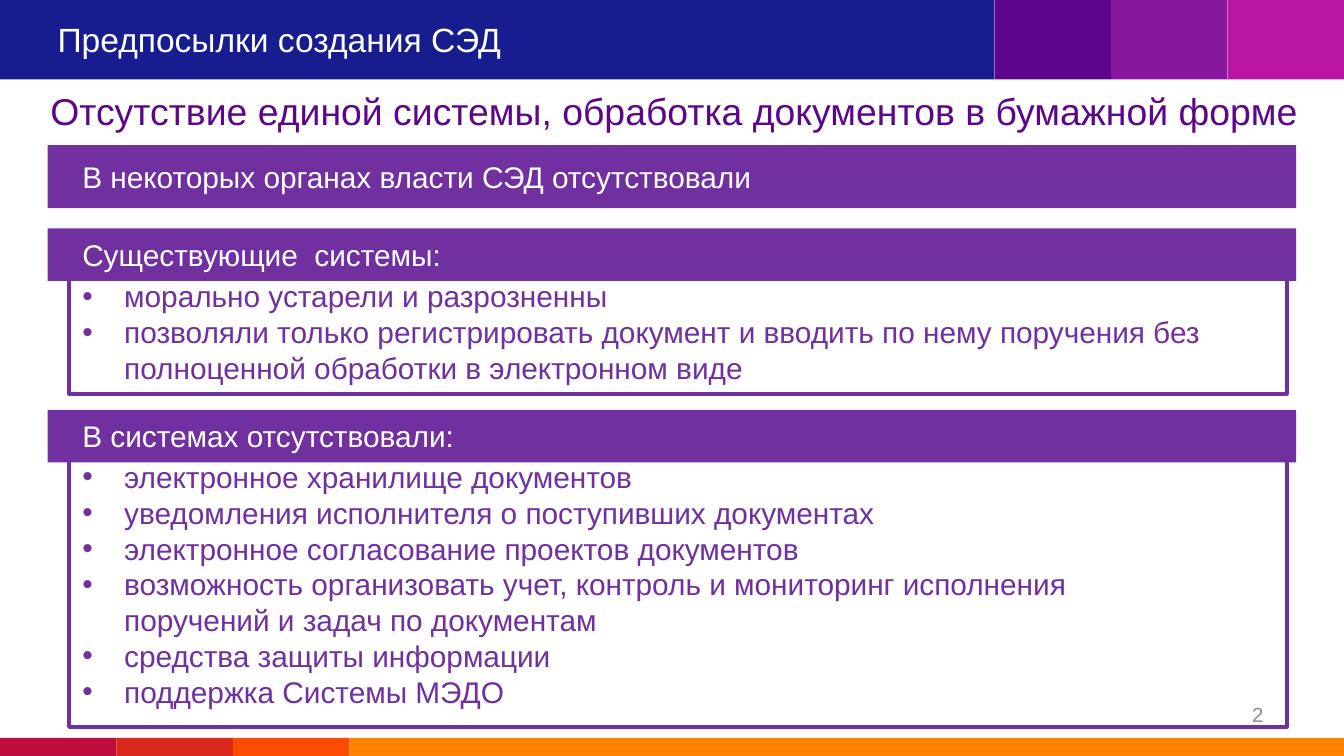
from dataclasses import dataclass
from itertools import accumulate
from typing import NamedTuple

from lxml.etree import SubElement
from pptx import Presentation
from pptx.dml.color import RGBColor
from pptx.enum.shapes import MSO_SHAPE
from pptx.enum.text import MSO_ANCHOR, PP_ALIGN
from pptx.oxml.ns import qn
from pptx.util import Inches, Pt

CELL = 0.1  # inches; the slide is a 16:9 grid, 100 columns wide
COLUMNS = 100
ROWS = COLUMNS * 9 / 16
STRIPE = 26 / 3  # columns in one narrow colour stripe
WIDE = COLUMNS - 3 * STRIPE
FOOTER_HEIGHT = 1.35
BAR_LEFT, BAR_WIDTH = 3.54, 92.9
INNER_LEFT, INNER_WIDTH = 5.14, 90.6


@dataclass(frozen=True)
class Theme:
    font: str = "Arial"
    white: str = "FFFFFF"
    heading: str = "5C068C"
    accent: str = "7030A0"
    muted: str = "8C8C8C"
    header: tuple = ("171C8F", "5C068C", "87189D", "BB16A3")
    footer: tuple = ("BF0D3E", "DA291C", "FC4C02", "FF8200")
    title_size: int = 18
    heading_size: int = 20
    text_size: int = 16
    number_size: int = 11
    frame_width: int = 2
    hanging: float = 3.12


THEME = Theme()


class Area(NamedTuple):
    """Left, top, width and height in grid cells."""
    left: float
    top: float
    width: float
    height: float

    def lengths(self) -> list:
        return [Inches(cells * CELL) for cells in self]


class Section(NamedTuple):
    heading: str
    top: float
    bar_height: float
    text_offset: float
    frame: Area | None = None
    list_top: float = 0
    items: tuple = ()


SECTIONS = (
    Section("В некоторых органах власти СЭД отсутствовали", 10.8, 4.7, 0.5),
    Section("Существующие  системы:", 17, 3.9, 0.1,
            Area(INNER_LEFT, 20.8, INNER_WIDTH, 8.5), 20.2,
            ("морально устарели и разрозненны",
             "позволяли только регистрировать документ и вводить по нему "
             "поручения без полноценной обработки в электронном виде")),
    Section("В системах отсутствовали:", 30.5, 3.9, 0.1,
            Area(INNER_LEFT, 33.6, INNER_WIDTH, 20.5), 33.63,
            ("электронное хранилище документов",
             "уведомления исполнителя о поступивших документах",
             "электронное согласование проектов документов",
             "возможность организовать учет, контроль и мониторинг исполнения \n"
             "поручений и задач по документам",
             "средства защиты информации",
             "поддержка Системы МЭДО")),
)


def add_block(slide, area: Area, fill: str, line: str | None = None) -> None:
    block = slide.shapes.add_shape(MSO_SHAPE.RECTANGLE, *area.lengths())
    block.shadow.inherit = False
    block.fill.solid()
    block.fill.fore_color.rgb = RGBColor.from_string(fill)
    if line:
        block.line.color.rgb = RGBColor.from_string(line)
        block.line.width = Pt(THEME.frame_width)
    else:
        block.line.fill.background()


def add_bullet(para) -> None:
    properties = para._p.get_or_add_pPr()
    hanging = Inches(THEME.hanging * CELL)
    properties.set("marL", str(hanging))
    properties.set("indent", str(-hanging))
    SubElement(properties, qn("a:buFont"), typeface=THEME.font)
    SubElement(properties, qn("a:buChar"), char="•")


def add_text(slide, area: Area, *lines: str, size: int = THEME.text_size,
             color: str = THEME.white, anchor=MSO_ANCHOR.TOP,
             align=PP_ALIGN.LEFT, bullets: bool = False) -> None:
    frame = slide.shapes.add_textbox(*area.lengths()).text_frame
    frame.word_wrap = True
    frame.vertical_anchor = anchor
    for index, line in enumerate(lines):
        para = frame.add_paragraph() if index else frame.paragraphs[0]
        if bullets:
            add_bullet(para)
        para.text = line
        para.alignment = align
        for span in para.runs:
            span.font.name = THEME.font
            span.font.size = Pt(size)
            span.font.color.rgb = RGBColor.from_string(color)


def add_stripes(slide, top: float, height: float, widths: list, colors: tuple) -> None:
    lefts = accumulate(widths[:-1], initial=0)
    for left, width, color in zip(lefts, widths, colors):
        add_block(slide, Area(left, top, width, height), color)


def add_section(slide, section: Section) -> None:
    if section.frame:
        add_block(slide, section.frame, THEME.white, line=THEME.accent)
        list_height = section.frame.top + section.frame.height - section.list_top
        add_text(slide, Area(INNER_LEFT, section.list_top, INNER_WIDTH, list_height),
                 *section.items, color=THEME.accent, bullets=True)
    add_block(slide, Area(BAR_LEFT, section.top, BAR_WIDTH, section.bar_height),
              THEME.accent)
    add_text(slide, Area(INNER_LEFT, section.top + section.text_offset, INNER_WIDTH, 3.7),
             section.heading)


def main() -> None:
    deck = Presentation()
    deck.slide_width = Inches(COLUMNS * CELL)
    deck.slide_height = Inches(ROWS * CELL)
    slide = deck.slides.add_slide(deck.slide_layouts[6])

    add_stripes(slide, 0, 5.9, [WIDE] + [STRIPE] * 3, THEME.header)
    add_stripes(slide, ROWS - FOOTER_HEIGHT, FOOTER_HEIGHT,
                [STRIPE] * 3 + [WIDE], THEME.footer)
    add_text(slide, Area(3.3, 1.54, 85.3, 2.8), "Предпосылки создания СЭД",
             size=THEME.title_size, anchor=MSO_ANCHOR.MIDDLE)
    add_text(slide, Area(2.76, 6.1, 95.3, 4.7),
             "Отсутствие единой системы, обработка документов в бумажной форме",
             size=THEME.heading_size, color=THEME.heading)
    for section in SECTIONS:
        add_section(slide, section)
    add_text(slide, Area(71.7, 52.14, 23.3, 2), "2", size=THEME.number_size,
             color=THEME.muted, anchor=MSO_ANCHOR.MIDDLE, align=PP_ALIGN.RIGHT)
    deck.save("out.pptx")


if __name__ == "__main__":
    main()
